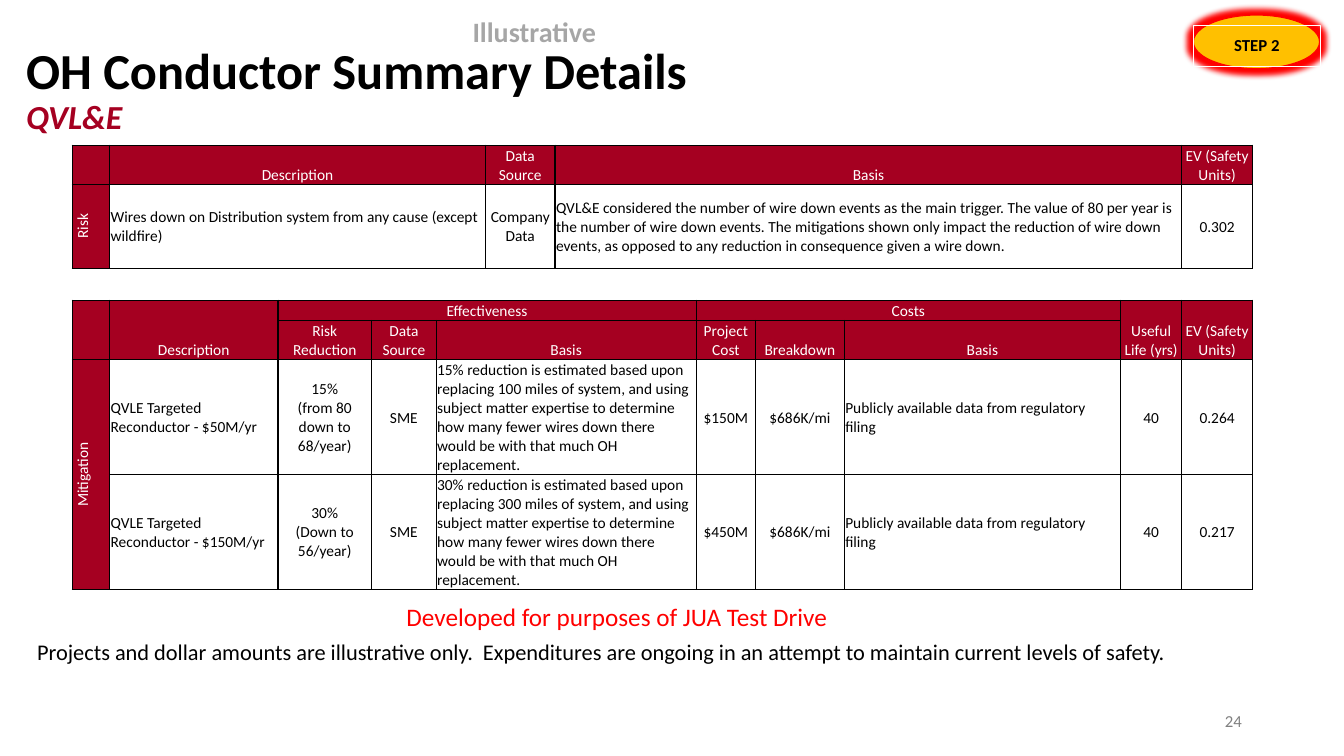
import lxml.etree
import pptx
import pptx.dml.color
import pptx.enum.shapes
import pptx.enum.text
import pptx.oxml.ns
import pptx.util

THEME = {
    "font": "Calibri",
    "crimson": "A50021", "black": "000000", "white": "FFFFFF", "red": "FF0000",
    "amber": "FFC000", "silver": "A6A6A6", "gray": "808080",
    "title": 36, "subtitle": 24, "tag": 20, "notice": 18, "footnote": 16,
    "small": 12, "cell": 11,
}
ALIGN = pptx.enum.text.PP_ALIGN
ANCHOR = pptx.enum.text.MSO_ANCHOR
SHAPE = pptx.enum.shapes.MSO_SHAPE
rgb = pptx.dml.color.RGBColor.from_string
qn = pptx.oxml.ns.qn

prs = pptx.Presentation()
prs.slide_width = pptx.util.Inches(13.33)
prs.slide_height = pptx.util.Inches(7.5)
s = prs.slides.add_slide(prs.slide_layouts[6])


def share(x, y, w, h):
    W, H = prs.slide_width, prs.slide_height
    return [int(v * full / 100) for v, full in ((x, W), (y, H), (w, W), (h, H))]


def add_run(p, text, size, color, bold=False, italic=False):
    r = p.add_run()
    r.text = text
    r.font.name = THEME["font"]
    r.font.size = pptx.util.Pt(THEME[size])
    r.font.color.rgb = rgb(THEME[color])
    r.font.bold = bold
    r.font.italic = italic


sp = s.shapes.add_textbox(*share(1.2, 5.47, 88.5, 15.47))
sp.text_frame.word_wrap = True
p = sp.text_frame.paragraphs[0]
p.line_spacing = 0.9
add_run(p, "OH Conductor Summary Details", "title", "black", bold=True)
p.add_line_break()
add_run(p, "QVL&E", "subtitle", "crimson", bold=True, italic=True)

col_weights = [0.37, 1.67, 0.93, 0.64, 0.49, 0.69, 1.4, 0.59, 0.88, 2.3, 0.44, 0.61, 0.7]
row_weights = [0.39, 0.83, 0.32, 0.2, 0.39, 1.14, 1.14]
spacer_row = 2
basis = ("{}% reduction is estimated based upon replacing {} miles of system, and using "
         "subject matter expertise to determine how many fewer wires down there would be "
         "with that much OH replacement.")
filing = "Publicly available data from regulatory filing"

cells = [
    (0, 0, 1, 1, "head", ""),
    (0, 1, 1, 4, "head", "Description"),
    (0, 5, 1, 1, "head", "Data Source"),
    (0, 6, 1, 6, "head", "Basis"),
    (0, 12, 1, 1, "head", "EV (Safety Units)"),
    (1, 0, 1, 1, "side", "Risk"),
    (1, 1, 1, 4, "left", "Wires down on Distribution system from any cause (except wildfire)"),
    (1, 5, 1, 1, "mid", "Company Data"),
    (1, 6, 1, 6, "left", "QVL&E considered the number of wire down events as the main trigger. "
     "The value of 80 per year is the number of wire down events. The mitigations shown only "
     "impact the reduction of wire down events, as opposed to any reduction in consequence "
     "given a wire down."),
    (1, 12, 1, 1, "mid", "0.302"),
    (3, 0, 2, 1, "head", ""),
    (3, 1, 2, 1, "head", "Description"),
    (3, 2, 1, 5, "head", "Effectiveness"),
    (3, 7, 1, 4, "head", "Costs"),
    (3, 11, 2, 1, "head", "Useful Life (yrs)"),
    (3, 12, 2, 1, "head", "EV (Safety Units)"),
    (4, 2, 1, 1, "head", "Risk Reduction"),
    (4, 3, 1, 1, "head", "Data Source"),
    (4, 4, 1, 3, "head", "Basis"),
    (4, 7, 1, 1, "head", "Project Cost"),
    (4, 8, 1, 1, "head", "Breakdown"),
    (4, 9, 1, 2, "head", "Basis"),
    (5, 0, 2, 1, "side", "Mitigation"),
]
projects = [
    ("$50M/yr", "15%\n(from 80 down to 68/year)", basis.format(15, 100), "$150M", "0.264"),
    ("$150M/yr", "30%\n(Down to 56/year)", basis.format(30, 300), "$450M", "0.217"),
]
for row, (budget, reduction, reason, cost, ev) in enumerate(projects, 5):
    cells += [
        (row, 1, 1, 1, "left", "QVLE Targeted Reconductor - " + budget),
        (row, 2, 1, 1, "mid", reduction),
        (row, 3, 1, 1, "mid", "SME"),
        (row, 4, 1, 3, "left", reason),
        (row, 7, 1, 1, "mid", cost),
        (row, 8, 1, 1, "mid", "$686K/mi"),
        (row, 9, 1, 2, "left", filing),
        (row, 11, 1, 1, "mid", "40"),
        (row, 12, 1, 1, "mid", ev),
    ]

left, top, width, height = share(5.38, 19.2, 87.82, 58.8)
table = s.shapes.add_table(len(row_weights), len(col_weights), left, top, width, height).table
table.first_row = False
table.horz_banding = False
table._tbl.tblPr.find(qn("a:tableStyleId")).text = "{2D5ABB26-0587-4C30-8999-92F81FD0307C}"
for tracks, weights, total in ((table.columns, col_weights, width), (table.rows, row_weights, height)):
    for track, weight in zip(tracks, weights):
        size = int(total * weight / sum(weights))
        if tracks is table.columns:
            track.width = size
        else:
            track.height = size

for row in range(len(row_weights)):
    for col in range(len(col_weights)):
        cell = table.cell(row, col)
        cell.margin_left = cell.margin_right = cell.margin_top = pptx.util.Inches(0.01)
        cell.margin_bottom = 0
        tcPr = cell._tc.get_or_add_tcPr()
        for side in "TB" if row == spacer_row else "LRTB":
            ln = lxml.etree.SubElement(tcPr, qn("a:ln" + side), w="12700")
            fill = lxml.etree.SubElement(ln, qn("a:solidFill"))
            lxml.etree.SubElement(fill, qn("a:srgbClr"), val=THEME["black"])
        cell.fill.background()
        end = lxml.etree.SubElement(cell.text_frame.paragraphs[0]._p, qn("a:endParaRPr"))
        end.set("sz", str(THEME["cell"] * 100))

for row, col, row_span, col_span, kind, text in cells:
    cell = table.cell(row, col)
    if row_span * col_span > 1:
        cell.merge(table.cell(row + row_span - 1, col + col_span - 1))
    cell.vertical_anchor = ANCHOR.BOTTOM if kind == "head" else ANCHOR.MIDDLE
    if kind in ("head", "side"):
        cell.fill.solid()
        cell.fill.fore_color.rgb = rgb(THEME["crimson"])
    if kind == "side":
        cell._tc.get_or_add_tcPr().set("vert", "vert270")
    tf = cell.text_frame
    for i, line in enumerate(text.split("\n") if text else []):
        p = tf.add_paragraph() if i else tf.paragraphs[0]
        p.alignment = ALIGN.LEFT if kind == "left" else ALIGN.CENTER
        add_run(p, line, "cell", "white" if kind in ("head", "side") else "black")

shapes = [
    (SHAPE.OVAL, (88.8, 2, 9.38, 7.07), "amber", "red"),
    (SHAPE.RECTANGLE, (88.8, 3.33, 9.45, 5.47), None, "white"),
    (SHAPE.RECTANGLE, (23.1, 78.93, 45.6, 11.47), "white", None),
]
drawn = []
for preset, area, fill, line in shapes:
    sp = s.shapes.add_shape(preset, *share(*area))
    sp.shadow.inherit = False
    if fill:
        sp.fill.solid()
        sp.fill.fore_color.rgb = rgb(THEME[fill])
    else:
        sp.fill.background()
    if line:
        sp.line.color.rgb = rgb(THEME[line])
        sp.line.width = pptx.util.Pt(0.75)
    else:
        sp.line.fill.background()
    drawn.append(sp)
badge, step, notice = drawn

effects = badge._element.spPr.find(qn("a:effectLst"))
glow = lxml.etree.SubElement(effects, qn("a:glow"), rad="101600")
lxml.etree.SubElement(glow, qn("a:srgbClr"), val=THEME["red"])

tf = step.text_frame
tf.margin_left = tf.margin_right = tf.margin_top = tf.margin_bottom = pptx.util.Inches(0.02)
tf.paragraphs[0].line_spacing = 0.9

number = s.shapes.add_textbox(*share(70.65, 92.67, 22.5, 5.33))
tag = s.shapes.add_textbox(*share(34.42, 1.33, 25.42, 5.87))
footnote = s.shapes.add_textbox(*share(2.03, 83.73, 96.9, 4.93))
labels = [
    (step, "STEP 2", "small", "black", True, ALIGN.CENTER, ANCHOR.MIDDLE),
    (notice, "Developed for purposes of JUA Test Drive", "notice", "red", False, ALIGN.CENTER, ANCHOR.TOP),
    (number, "24", "small", "gray", False, ALIGN.RIGHT, ANCHOR.MIDDLE),
    (tag, "Illustrative", "tag", "silver", True, ALIGN.LEFT, ANCHOR.TOP),
    (footnote, "Projects and dollar amounts are illustrative only.  Expenditures are ongoing "
     "in an attempt to maintain current levels of safety.", "footnote", "black", False, ALIGN.LEFT, ANCHOR.TOP),
]
for sp, text, size, color, bold, align, anchor in labels:
    tf = sp.text_frame
    tf.word_wrap = True
    tf.vertical_anchor = anchor
    p = tf.paragraphs[0]
    p.alignment = align
    add_run(p, text, size, color, bold=bold)

prs.save("out.pptx")
